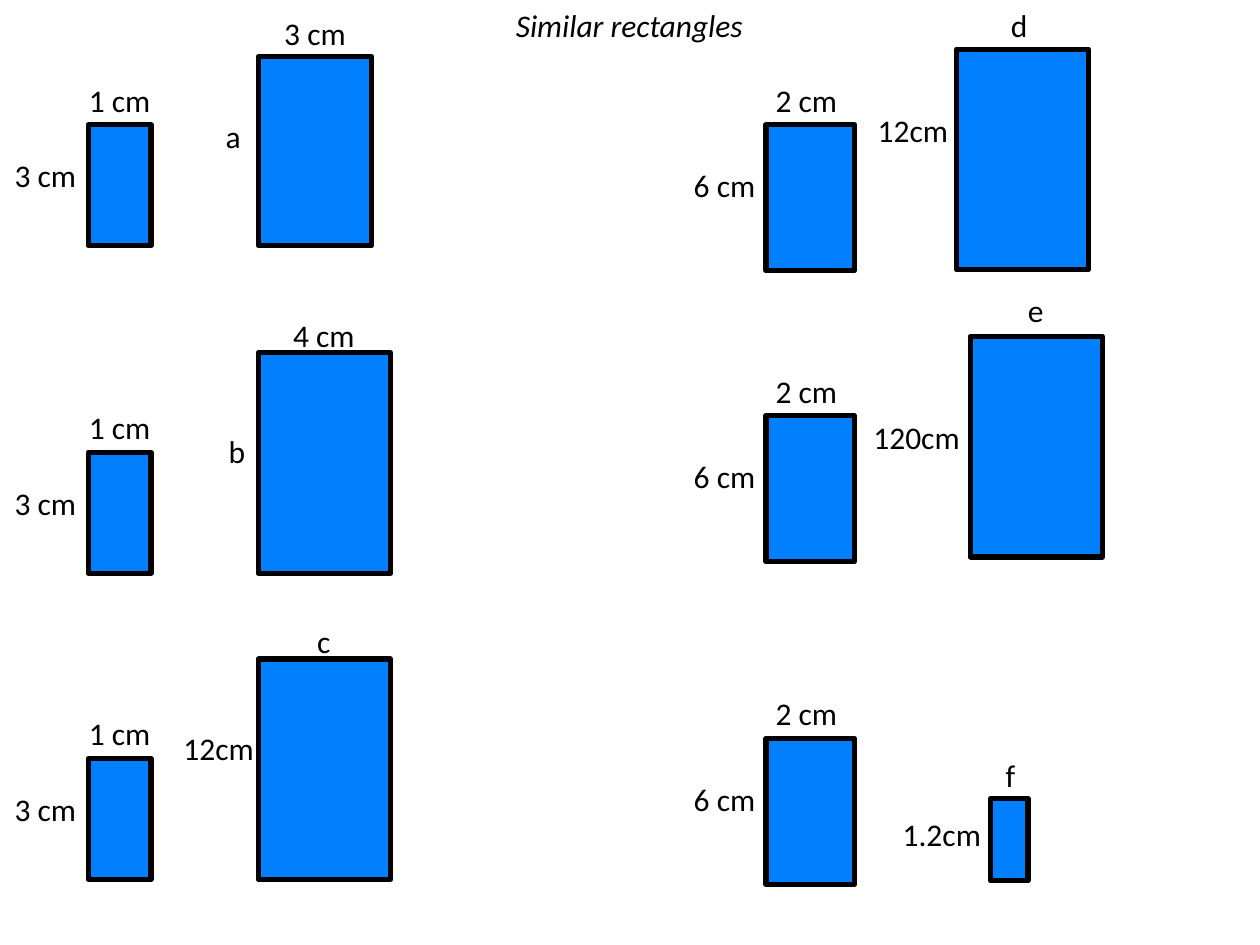
from pptx import Presentation
from pptx.dml.color import RGBColor
from pptx.enum.shapes import MSO_SHAPE
from pptx.enum.text import MSO_AUTO_SIZE, PP_ALIGN
from pptx.util import Inches, Pt

RECTANGLE = MSO_SHAPE.RECTANGLE
GROW = MSO_AUTO_SIZE.SHAPE_TO_FIT_TEXT
CENTER = PP_ALIGN.CENTER

TITLE = ("Similar rectangles", 3.9, 0, 2.19)
LABEL_HEIGHT = 0.4
LABEL_WIDTH = 0.76
WIDE_LABEL = 0.93
FONT = {"name": "Calibri", "size": Pt(18)}

SMALL_COLUMNS = [
    {"left": 0.7, "size": (0.5, 0.96), "tops": (0.99, 3.59, 6.02),
     "labels": [("1 cm", -0.13, -0.4), ("3 cm", -0.72, 0.2)]},
    {"left": 6.08, "size": (0.7, 1.16), "tops": (0.99, 3.3, 5.86),
     "labels": [("2 cm", -0.06, -0.4), ("6 cm", -0.71, 0.28)]},
]

SCALED_RECTANGLES = [
    ((2.05, 0.45, 0.9, 1.5), ("3 cm", 2.12, 0.06), ("a", 1.47, 0.88)),
    ((2.05, 2.8, 1.05, 1.75), ("4 cm", 2.19, 2.46), ("b", 1.5, 3.38)),
    ((2.05, 5.23, 1.05, 1.75), ("c", 2.19, 4.89), ("12cm", 1.27, 5.74)),
    ((7.59, 0.39, 1.05, 1.75), ("d", 7.71, 0), ("12cm", 6.78, 0.83)),
    ((7.7, 2.67, 1.05, 1.75), ("e", 7.84, 2.26), ("120cm", 6.81, 3.27)),
    ((7.86, 6.34, 0.3, 0.65), ("f", 7.64, 5.95), ("1.2cm", 7.01, 6.42)),
]


def color(value):
    return RGBColor.from_string(value)


def add_rectangle(page, left, top, width, height):
    shape = page.shapes.add_shape(RECTANGLE, *map(Inches, (left, top, width, height)))
    shape.shadow.inherit = False
    shape.fill.solid()
    shape.fill.fore_color.rgb = color("007FFF")
    shape.line.color.rgb = color("000000")
    shape.line.width = Pt(3)


def add_label(page, text, left, top, width=None, italic=None):
    width = width or (WIDE_LABEL if len(text) > 3 and " " not in text else LABEL_WIDTH)
    box = page.shapes.add_textbox(*map(Inches, (left, top, width, LABEL_HEIGHT)))
    frame = box.text_frame
    frame.word_wrap = True
    frame.auto_size = GROW
    paragraph = frame.paragraphs[0]
    paragraph.alignment = CENTER
    span = paragraph.add_run()
    span.text = text
    for name, value in {**FONT, "italic": italic}.items():
        setattr(span.font, name, value)
    span.font.color.rgb = color("000000")


def main():
    """Build the worksheet of similar rectangle pairs."""
    deck = Presentation()
    deck.slide_width, deck.slide_height = Inches(10), Inches(7.5)
    page = deck.slides.add_slide(deck.slide_layouts[6])
    for column in SMALL_COLUMNS:
        left = column["left"]
        for top in column["tops"]:
            add_rectangle(page, left, top, *column["size"])
            for text, across, down in column["labels"]:
                add_label(page, text, left + across, top + down)
    for bounds, *labels in SCALED_RECTANGLES:
        add_rectangle(page, *bounds)
        for label in labels:
            add_label(page, *label)
    add_label(page, *TITLE, italic=True)
    deck.save("out.pptx")


if __name__ == "__main__":
    main()
